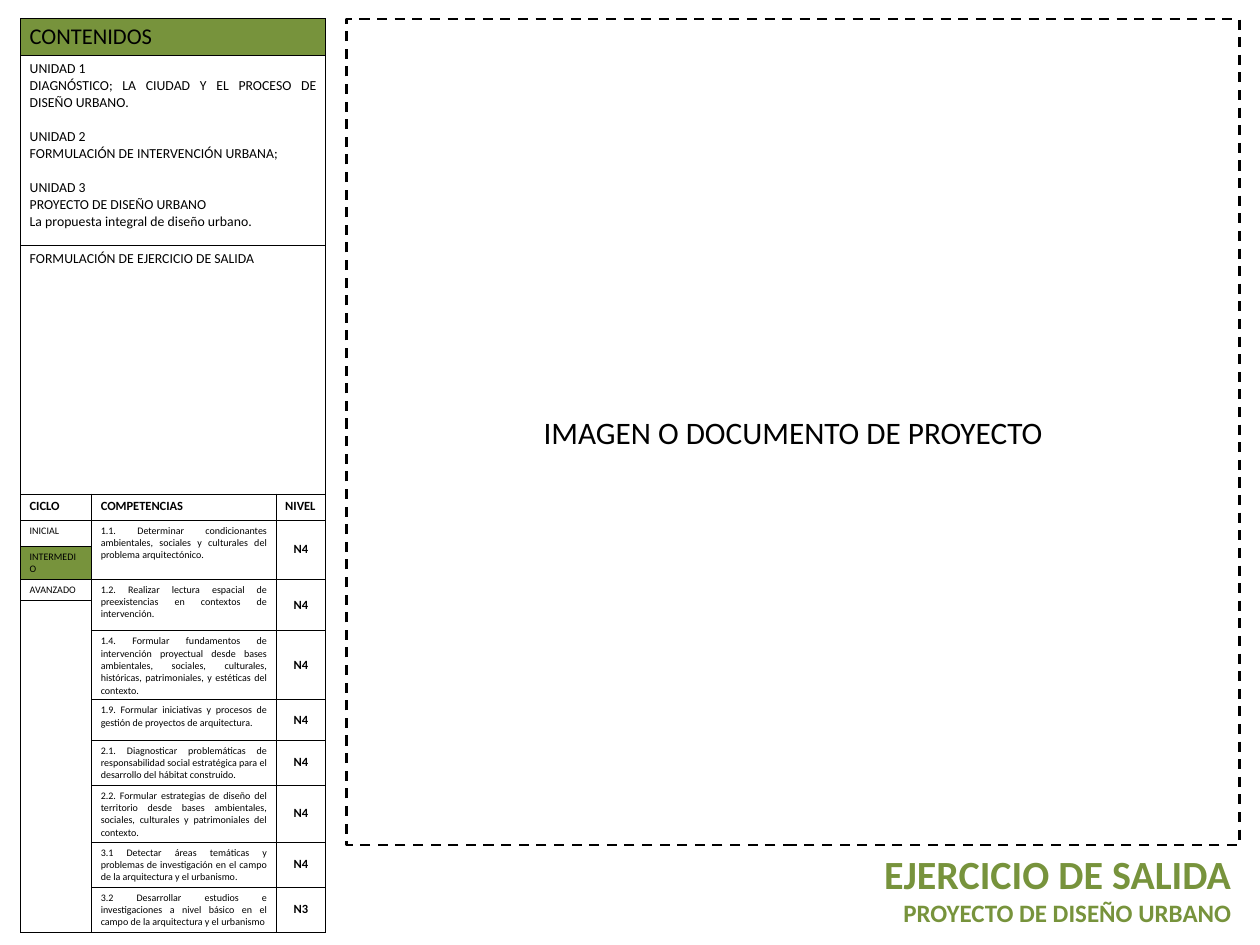
from lxml.etree import SubElement
from pptx import Presentation
from pptx.dml.color import RGBColor
from pptx.enum.dml import MSO_LINE
from pptx.enum.shapes import MSO_SHAPE
from pptx.enum.text import MSO_ANCHOR, MSO_AUTO_SIZE, PP_ALIGN
from pptx.oxml.ns import qn
from pptx.util import Inches, Pt

GREEN, BLACK = "77933C", "000000"

UNITS = [
    "UNIDAD 1",
    "DIAGNÓSTICO; LA CIUDAD Y EL PROCESO DE DISEÑO URBANO.",
    "UNIDAD 2",
    "FORMULACIÓN DE INTERVENCIÓN URBANA;",
    "UNIDAD 3",
    "PROYECTO DE DISEÑO URBANO",
    "La propuesta integral de diseño urbano.",
]
HEADINGS = ["CICLO", "COMPETENCIAS", "NIVEL"]
CYCLES = ["INICIAL", "INTERMEDIO", "AVANZADO"]
CURRENT_CYCLE = "INTERMEDIO"
# first row, rows spanned, competence, level
COMPETENCES = [
    (4, 2, "1.1. Determinar condicionantes ambientales, sociales y culturales "
           "del problema arquitectónico.", "N4"),
    (6, 2, "1.2. Realizar lectura espacial de preexistencias en contextos "
           "de intervención.", "N4"),
    (8, 1, "1.4. Formular fundamentos de intervención proyectual desde bases "
           "ambientales, sociales, culturales, históricas, patrimoniales, "
           "y estéticas del contexto.", "N4"),
    (9, 1, "1.9. Formular iniciativas y procesos de gestión de proyectos "
           "de arquitectura.", "N4"),
    (10, 1, "2.1. Diagnosticar problemáticas de responsabilidad social "
            "estratégica para el desarrollo del hábitat construido.", "N4"),
    (11, 1, "2.2. Formular estrategias de diseño del territorio desde bases "
            "ambientales, sociales, culturales y patrimoniales del contexto.", "N4"),
    (12, 1, "3.1 Detectar áreas temáticas y problemas de investigación en el "
            "campo de la arquitectura y el urbanismo.", "N4"),
    (13, 1, "3.2 Desarrollar estudios e investigaciones a nivel básico en el "
            "campo de la arquitectura y el urbanismo", "N3"),
]
COLUMNS = [0.79, 2.05, 0.55]
ROWS = [0.41, 2.11, 2.76, 0.29, 0.29, 0.21, 0.21,
        0.34, 0.62, 0.45, 0.42, 0.42, 0.29, 0.29]
FIRST_BODY_ROW, LAST_ROW = 4, len(ROWS) - 1


def rgb(value):
    return RGBColor.from_string(value)


def rule_width(row, column):
    """Width in points of the rule below a cell; row -1 is the table's top."""
    in_cycles = column == 0 and row >= FIRST_BODY_ROW
    return 0.5 if row in (1, LAST_ROW) or in_cycles else 1


def add_borders(cell, row, column):
    widths = {"a:lnL": 1, "a:lnR": 1,
              "a:lnT": rule_width(row - 1, column),
              "a:lnB": rule_width(row, column)}
    properties = cell._tc.get_or_add_tcPr()
    for tag, width in widths.items():
        border = SubElement(properties, qn(tag), w=str(Pt(width)))
        solid = SubElement(border, qn("a:solidFill"))
        SubElement(solid, qn("a:srgbClr"), val=BLACK)


class Sheet:
    def __init__(self, slide, font="Calibri"):
        self.slide = slide
        self.font = font

    def set_text(self, frame, text, size, color=BLACK, bold=False,
                 align=PP_ALIGN.JUSTIFY):
        frame.text = text
        for paragraph in frame.paragraphs:
            self.style(paragraph, size, color, bold, align)

    def style(self, paragraph, size, color, bold, align):
        paragraph.alignment = align
        for run in paragraph.runs:
            run.font.name = self.font
            run.font.size = Pt(size)
            run.font.bold = bold
            run.font.color.rgb = rgb(color)

    def title(self, box, lines):
        caption = self.slide.shapes.add_textbox(*map(Inches, box))
        frame = caption.text_frame
        frame.word_wrap = True
        frame.auto_size = MSO_AUTO_SIZE.SHAPE_TO_FIT_TEXT
        frame.text = "\n".join(text for text, _ in lines)
        for paragraph, (_, size) in zip(frame.paragraphs, lines):
            self.style(paragraph, size, GREEN, True, PP_ALIGN.RIGHT)

    def dashed_frame(self, box, text):
        area = self.slide.shapes.add_shape(MSO_SHAPE.RECTANGLE, *map(Inches, box))
        area.shadow.inherit = False
        area.fill.background()
        area.line.color.rgb = rgb(BLACK)
        area.line.width = Pt(2)
        area.line.dash_style = MSO_LINE.DASH
        area.text_frame.vertical_anchor = MSO_ANCHOR.MIDDLE
        self.set_text(area.text_frame, text, 25, align=PP_ALIGN.CENTER)

    def grid(self, left, top, columns, rows):
        """Add a plain ruled table without a banded style."""
        table = self.slide.shapes.add_table(
            len(rows), len(columns), Inches(left), Inches(top),
            Inches(sum(columns)), Inches(sum(rows))).table
        table.first_row = table.horz_banding = False
        for column, width in zip(table.columns, columns):
            column.width = Inches(width)
        for row, height in zip(table.rows, rows):
            row.height = Inches(height)
        for r in range(len(rows)):
            for c in range(len(columns)):
                cell = table.cell(r, c)
                add_borders(cell, r, c)
                cell.fill.background()
        return table

    def cell(self, cell, text, size, fill=None, **style):
        self.set_text(cell.text_frame, text, size, **style)
        if fill:
            cell.fill.solid()
            cell.fill.fore_color.rgb = rgb(fill)

    def contents(self, table):
        for row in range(3):
            table.cell(row, 0).merge(table.cell(row, 2))
        self.cell(table.cell(0, 0), "CONTENIDOS", 18, fill=GREEN)
        self.cell(table.cell(1, 0), "\n".join(UNITS), 11)
        for paragraph in table.cell(1, 0).text_frame.paragraphs[1:]:
            if paragraph.text.startswith("UNIDAD"):
                paragraph.space_before = Pt(13.5)
        self.cell(table.cell(2, 0), "FORMULACIÓN DE EJERCICIO DE SALIDA", 11)

    def competences(self, table):
        for column, heading in enumerate(HEADINGS):
            self.cell(table.cell(3, column), heading, 10, bold=True)
        for row, cycle in enumerate(CYCLES, FIRST_BODY_ROW):
            fill = GREEN if cycle == CURRENT_CYCLE else None
            self.cell(table.cell(row, 0), cycle, 8, fill=fill)
        table.cell(FIRST_BODY_ROW + len(CYCLES), 0).merge(table.cell(LAST_ROW, 0))
        for row, span, competence, level in COMPETENCES:
            if span > 1:
                for column in (1, 2):
                    table.cell(row, column).merge(table.cell(row + span - 1, column))
            self.cell(table.cell(row, 1), competence, 8)
            level_cell = table.cell(row, 2)
            level_cell.vertical_anchor = MSO_ANCHOR.MIDDLE
            self.cell(level_cell, level, 10, bold=True, align=PP_ALIGN.CENTER)


def main():
    deck = Presentation()
    deck.slide_width, deck.slide_height = Inches(14), Inches(10.5)
    sheet = Sheet(deck.slides.add_slide(deck.slide_layouts[6]))
    sheet.title((4.39, 9.39, 9.39, 0.98),
                [("EJERCICIO DE SALIDA", 32), ("PROYECTO DE DISEÑO URBANO", 20)])
    sheet.dashed_frame((3.85, 0.21, 9.92, 9.18), "IMAGEN O DOCUMENTO DE PROYECTO")
    syllabus = sheet.grid(0.23, 0.21, COLUMNS, ROWS)
    sheet.contents(syllabus)
    sheet.competences(syllabus)
    deck.save("out.pptx")


if __name__ == "__main__":
    main()
